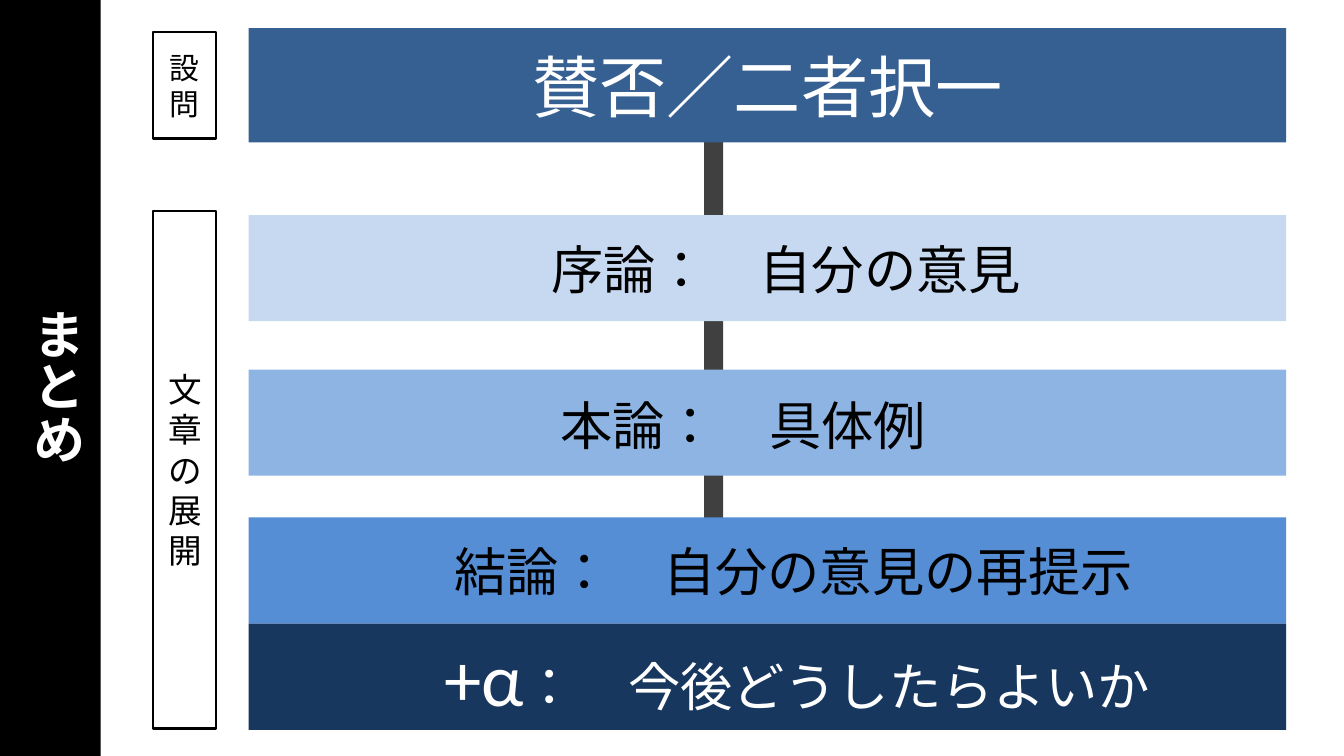
from dataclasses import dataclass

from pptx import Presentation
from pptx.dml.color import RGBColor
from pptx.enum import lang, shapes, text
from pptx.util import Inches, Pt


@dataclass(frozen=True)
class Theme:
    font: str = "Calibri"
    black: str = "000000"
    white: str = "FFFFFF"
    spine: str = "404040"
    question: str = "376092"
    intro: str = "C6D9F1"
    body: str = "8EB4E3"
    conclusion: str = "558ED5"
    extra: str = "17375E"
    question_size: int = 36
    stage_size: int = 28
    alpha_size: int = 40
    development_size: int = 18
    prompt_size: int = 16
    border: float = 1.25


THEME = Theme()
WIDTH = 10
HEIGHT = WIDTH * 9 / 16
PAD_X, PAD_Y = 0.1, 0.05


def add_block(slide, box, fill=None, line=None):
    block = slide.shapes.add_shape(
        shapes.MSO_SHAPE.RECTANGLE, *(Inches(v) for v in box))
    block.shadow.inherit = False
    if fill:
        block.fill.solid()
        block.fill.fore_color.rgb = RGBColor.from_string(fill)
    else:
        block.fill.background()
    if line:
        block.line.color.rgb = RGBColor.from_string(line)
        block.line.width = Pt(THEME.border)
    else:
        block.line.fill.background()
    return block


def write(holder, runs, color=THEME.black, bold=None, centered=True,
          indent=0, drop=0, wrap=True):
    """Fill a shape with one line of (wording, size) runs, shifted by indent and drop."""
    frame = holder.text_frame
    frame.word_wrap = wrap
    frame.vertical_anchor = text.MSO_ANCHOR.MIDDLE
    frame.margin_left, frame.margin_right = Inches(PAD_X + indent), Inches(PAD_X)
    frame.margin_top, frame.margin_bottom = Inches(PAD_Y + drop), Inches(PAD_Y)
    line = frame.paragraphs[0]
    line.alignment = text.PP_ALIGN.CENTER if centered else text.PP_ALIGN.LEFT
    for wording, size in runs:
        run = line.add_run()
        run.text = wording
        run.font.name = THEME.font
        run.font.size = Pt(size)
        run.font.bold = bold
        run.font.color.rgb = RGBColor.from_string(color)
        run.font.language_id = lang.MSO_LANGUAGE_ID.JAPANESE


def add_sidebar(slide, left, top, width, height):
    add_block(slide, (left, top, width, height), fill=THEME.black)
    title = slide.shapes.add_textbox(
        Inches(left + 0.04), Inches(top + 2.2), Inches(0.67), Inches(1.2))
    write(title, [("まとめ", THEME.stage_size)], color=THEME.white, bold=True,
          centered=False, wrap=False)
    title.text_frame.vertical_anchor = text.MSO_ANCHOR.TOP
    title.text_frame.auto_size = text.MSO_AUTO_SIZE.SHAPE_TO_FIT_TEXT
    title.text_frame._txBody.bodyPr.set("vert", "eaVert")


def add_labels(slide, left, top, width, height):
    """Place the two narrow labels, whose text wraps to one character a line."""
    prompt_height, development_top = 0.79, 1.33
    prompt = add_block(slide, (left, top, width, prompt_height),
                       fill=THEME.white, line=THEME.black)
    write(prompt, [("設問", THEME.prompt_size)])
    development = add_block(
        slide, (left, top + development_top, width, height - development_top),
        line=THEME.black)
    write(development, [("文章の展開", THEME.development_size)])


def add_outline(slide, left, top, width, height):
    """Place the question bar and the essay stages over their spine."""
    question_height, stage_height = 0.85, 0.79
    extra_top = height - stage_height
    size = THEME.stage_size

    add_block(slide, (left + 3.39, top + 0.83, 0.14, 3.18), fill=THEME.spine)
    question = add_block(slide, (left, top, width, question_height),
                         fill=THEME.question)
    write(question, [("賛否／二者択一", THEME.question_size)], color=THEME.white)

    stages = [
        (1.39, THEME.intro, [("序論：　自分の意見", size)],
         dict(centered=False, indent=2.15)),
        (2.54, THEME.body, [("本論：　具体例", size)],
         dict(centered=False, indent=2.22, drop=0.03)),
        (extra_top - stage_height, THEME.conclusion,
         [("結論：　自分の意見の再提示", size)], dict(indent=0.39)),
        (extra_top, THEME.extra,
         [("+α", THEME.alpha_size), ("：　今後どうしたらよいか", size)],
         dict(color=THEME.white, indent=0.44)),
    ]
    for offset, fill, runs, style in stages:
        stage = add_block(slide, (left, top + offset, width, stage_height), fill=fill)
        write(stage, runs, **style)


def main():
    deck = Presentation()
    deck.slide_width, deck.slide_height = Inches(WIDTH), Inches(HEIGHT)
    slide = deck.slides.add_slide(deck.slide_layouts[6])
    add_sidebar(slide, 0, 0, 0.75, HEIGHT)
    add_labels(slide, 1.14, 0.24, 0.47, 5.18)
    add_outline(slide, 1.85, 0.21, 7.72, 5.22)
    deck.save("out.pptx")


if __name__ == "__main__":
    main()
